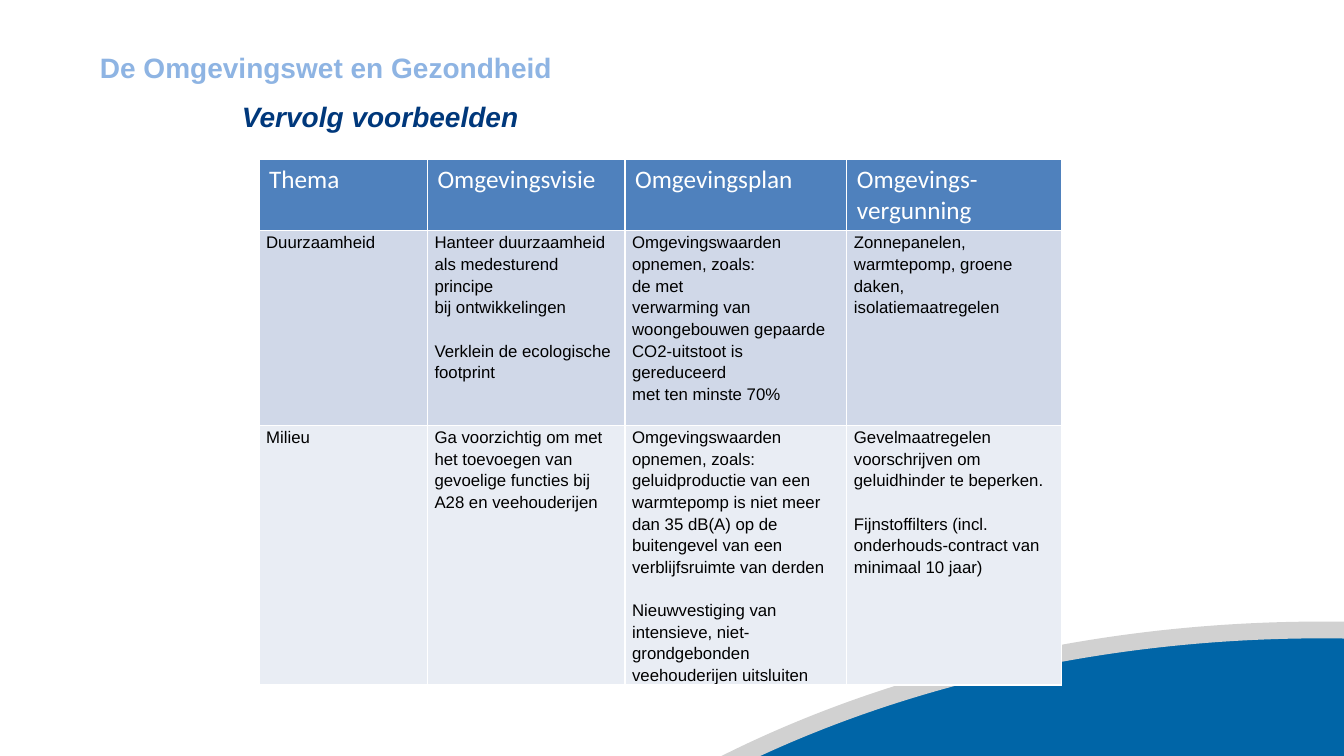
from lxml.etree import SubElement
from pptx import Presentation
from pptx.dml.color import RGBColor
from pptx.enum.shapes import MSO_SHAPE
from pptx.enum.text import MSO_ANCHOR, MSO_AUTO_SIZE, PP_ALIGN
from pptx.oxml.ns import qn
from pptx.util import Inches, Pt

WHITE = RGBColor(0xFF, 0xFF, 0xFF)
BLACK = RGBColor(0x00, 0x00, 0x00)
LIGHT_BLUE = RGBColor(0x8E, 0xB4, 0xE3)
NAVY = RGBColor(0x00, 0x38, 0x7B)
HILL_BLUE = RGBColor(0x00, 0x65, 0xA7)
HILL_EDGE = RGBColor(0xD1, 0xD1, 0xD1)
HEADER_BLUE = RGBColor(0x4F, 0x81, 0xBD)
BANDS = [RGBColor(0xD0, 0xD8, 0xE8), RGBColor(0xE9, 0xED, 0xF4)]

COLUMN_WIDTHS = [1.67, 1.96, 2.2, 2.13]
ROW_HEIGHTS = [0.7, 1.93, 2.57]
HEADERS = ["Thema", "Omgevingsvisie", "Omgevingsplan", "Omgevings-vergunning"]

# Each cell is a list of blocks, each block a list of paragraphs
THEMES = [
    [
        [["Duurzaamheid"]],
        [["Hanteer duurzaamheid als medesturend principe",
          "bij ontwikkelingen"],
         ["Verklein de ecologische footprint"]],
        [["Omgevingswaarden opnemen, zoals:",
          "de met",
          "verwarming van woongebouwen gepaarde CO2-uitstoot is gereduceerd",
          "met ten minste 70%"]],
        [["Zonnepanelen, warmtepomp, groene daken, isolatiemaatregelen"]],
    ],
    [
        [["Milieu"]],
        [["Ga voorzichtig om met het toevoegen van gevoelige functies bij "
          "A28 en veehouderijen"]],
        [["Omgevingswaarden opnemen, zoals:",
          "geluidproductie van een warmtepomp is niet meer",
          "dan 35 dB(A) op de buitengevel van een verblijfsruimte van derden"],
         ["Nieuwvestiging van intensieve, niet-grondgebonden veehouderijen "
          "uitsluiten"]],
        [["Gevelmaatregelen voorschrijven om geluidhinder te beperken."],
         ["Fijnstoffilters (incl. onderhouds-contract van minimaal 10 jaar)"]],
    ],
]


class SlideBuilder:
    body_font = "Arial"
    header_font = "Calibri"
    block_gap = Pt(15.5)

    def __init__(self, slide):
        self.slide = slide

    def add_run(self, paragraph, text, font, size, color, bold=False, italic=False):
        run = paragraph.add_run()
        run.text = text
        run.font.name = font
        run.font.size = Pt(size)
        run.font.color.rgb = color
        run.font.bold = bold
        run.font.italic = italic

    def heading(self, placeholder, text, left, top, width, height, color, italic=False):
        placeholder.left, placeholder.top = Inches(left), Inches(top)
        placeholder.width, placeholder.height = Inches(width), Inches(height)
        frame = placeholder.text_frame
        frame.word_wrap = True
        frame.auto_size = MSO_AUTO_SIZE.NONE
        frame.vertical_anchor = MSO_ANCHOR.TOP
        frame.margin_top = frame.margin_bottom = 0
        paragraph = frame.paragraphs[0]
        properties = paragraph._p.get_or_add_pPr()
        properties.set("marL", "0")
        properties.set("indent", "0")
        SubElement(properties, qn("a:buNone"))
        paragraph.alignment = PP_ALIGN.LEFT
        paragraph.space_before = Pt(0)
        self.add_run(paragraph, text, self.body_font, 20, color, True, italic)

    def hill(self, left, top, width, height):
        hill = self.slide.shapes.add_shape(
            MSO_SHAPE.OVAL, Inches(left), Inches(top), Inches(width), Inches(height))
        hill.shadow.inherit = False
        hill.fill.solid()
        hill.fill.fore_color.rgb = HILL_BLUE
        hill.line.color.rgb = HILL_EDGE
        hill.line.width = Pt(12)

    def paint_cell(self, cell, color):
        cell.fill.solid()
        cell.fill.fore_color.rgb = color
        properties = cell._tc.get_or_add_tcPr()
        for index, side in enumerate(["lnL", "lnR", "lnT", "lnB"]):
            border = SubElement(properties, qn(f"a:{side}"), w=str(Pt(1)))
            fill = SubElement(border, qn("a:solidFill"))
            SubElement(fill, qn("a:srgbClr"), val=str(WHITE))
            properties.insert(index, border)

    def header_cell(self, cell, text):
        self.paint_cell(cell, HEADER_BLUE)
        self.add_run(cell.text_frame.paragraphs[0], text, self.header_font, 18, WHITE)

    def theme_cell(self, cell, blocks, color):
        self.paint_cell(cell, color)
        cell.margin_left = cell.margin_right = Inches(0.07)
        cell.margin_top = cell.margin_bottom = 0
        frame = cell.text_frame
        for block_index, block in enumerate(blocks):
            for line_index, text in enumerate(block):
                first = block_index == line_index == 0
                paragraph = frame.paragraphs[0] if first else frame.add_paragraph()
                paragraph.line_spacing = 1.15
                if block_index and line_index == 0:
                    paragraph.space_before = self.block_gap
                self.add_run(paragraph, text, self.body_font, 12, BLACK)

    def theme_table(self, left, top):
        table = self.slide.shapes.add_table(
            len(ROW_HEIGHTS), len(COLUMN_WIDTHS), Inches(left), Inches(top),
            Inches(sum(COLUMN_WIDTHS)), Inches(sum(ROW_HEIGHTS))).table
        for column, width in zip(table.columns, COLUMN_WIDTHS):
            column.width = Inches(width)
        for row, height in zip(table.rows, ROW_HEIGHTS):
            row.height = Inches(height)
        for column, header in enumerate(HEADERS):
            self.header_cell(table.cell(0, column), header)
        for row, (theme, band) in enumerate(zip(THEMES, BANDS), start=1):
            for column, blocks in enumerate(theme):
                self.theme_cell(table.cell(row, column), blocks, band)


def main():
    presentation = Presentation()
    presentation.slide_width = Inches(13.33)
    presentation.slide_height = Inches(7.5)
    slide = presentation.slides.add_slide(presentation.slide_layouts[1])
    builder = SlideBuilder(slide)

    # Blue hill in the lower right corner
    builder.hill(3.11, 6.25, 20, 13.67)

    # Title and subtitle
    builder.heading(slide.shapes.title, "De Omgevingswet en Gezondheid",
                    0.89, 0.5, 11.22, 0.33, LIGHT_BLUE)
    builder.heading(slide.placeholders[1], "Vervolg voorbeelden",
                    2.3, 0.99, 8.42, 0.58, NAVY, italic=True)

    # Examples per theme
    builder.theme_table(2.57, 1.58)

    presentation.save("out.pptx")


if __name__ == "__main__":
    main()
